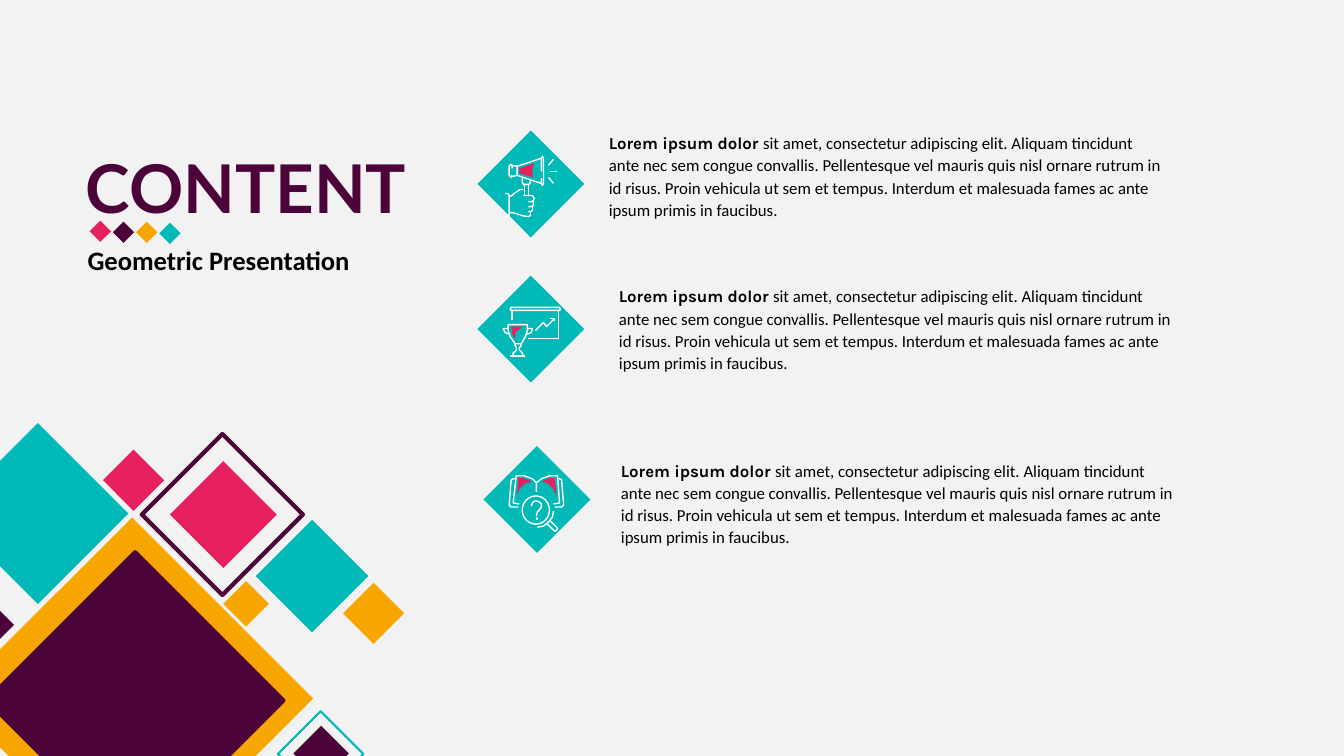
from pptx import Presentation
from pptx.dml.color import RGBColor
from pptx.enum.shapes import MSO_CONNECTOR, MSO_SHAPE
from pptx.enum.text import MSO_ANCHOR, MSO_AUTO_SIZE, PP_ALIGN
from pptx.oxml.ns import qn
from pptx.util import Pt
from lxml import etree

PX = 9144  # EMU per px, 100 px to the inch
RECT, OVAL = MSO_SHAPE.RECTANGLE, MSO_SHAPE.OVAL
STRAIGHT = MSO_CONNECTOR.STRAIGHT
GROW, TOP, LEFT = MSO_AUTO_SIZE.SHAPE_TO_FIT_TEXT, MSO_ANCHOR.TOP, PP_ALIGN.LEFT

PAPER = RGBColor(0xF2, 0xF2, 0xF2)
BLACK = RGBColor(0x00, 0x00, 0x00)
WHITE = RGBColor(0xFF, 0xFF, 0xFF)
PLUM = RGBColor(0x4C, 0x03, 0x39)
TEAL = RGBColor(0x01, 0xB9, 0xB7)
AMBER = RGBColor(0xF7, 0xA6, 0x00)
PINK = RGBColor(0xE7, 0x20, 0x5F)

LEAD = "Lorem ipsum dolor "
BODY = ("sit amet, consectetur adipiscing elit. Aliquam tincidunt ante nec sem congue "
        "convallis. Pellentesque vel mauris quis nisl ornare rutrum in id risus. Proin "
        "vehicula ut sem et tempus. Interdum et malesuada fames ac ante ipsum primis in "
        "faucibus.")

# Corner tiles: left, top, size, fill, line colour, line width
CORNER_TILES = [
    (4, 566, 254, AMBER, None, 0),
    (-102, 572, 96, PLUM, None, 0),
    (-26, 446, 127, TEAL, None, 0),
    (164, 454, 113, None, PLUM, 3),
    (228, 583, 32, AMBER, None, 0),
    (349, 587, 43, AMBER, None, 0),
    (111, 455, 43, PINK, None, 0),
    (270, 532, 79, TEAL, None, 0),
    (288, 718, 60, None, TEAL, 1.5),
    (299, 728, 39, PLUM, None, 0),
    (30, 591, 208, PLUM, PLUM, 3),
    (184, 473, 75, PINK, None, 0),
]

# Icons: outlines as points, ovals as boxes, accents as filled outlines
MEGAPHONE = {
    "lines": [
        [(537, 157), (513, 165), (513, 174), (537, 182)],
        [(537, 170), (537, 157), (538, 155), (539, 157), (539, 182), (538, 184),
         (537, 182), (537, 177)],
        [(513, 165), (508, 164)], [(508, 175), (513, 174)],
        [(508, 174), (507, 176), (505, 174), (505, 165), (507, 163), (508, 165), (508, 167)],
        [(518, 176), (518, 181), (519, 183), (525, 183), (526, 181), (526, 179)],
        [(545, 170), (552, 170)], [(544, 164), (549, 158)], [(544, 176), (549, 182)],
        [(524, 200), (528, 200), (530, 197), (528, 194), (519, 194)],
        [(524, 205), (527, 205), (529, 204), (529, 202)],
        [(524, 210), (526, 210), (528, 209), (528, 208)],
        [(505, 211), (508, 211), (512, 212), (518, 214), (524, 215), (526, 214), (526, 212)],
        [(519, 188), (516, 188), (513, 190), (510, 192), (508, 194), (505, 195)],
        [(526, 212), (526, 210)], [(528, 208), (528, 205)],
        [(501, 192), (504, 192), (505, 194), (505, 213), (504, 215), (501, 215)],
        [(529, 202), (529, 199)], [(524, 194), (524, 183)], [(520, 183), (520, 194)],
    ],
    "ovals": [],
    "accents": [[(515, 172), (515, 167), (530, 162), (528, 168), (528, 173), (529, 176)]],
}
TROPHY = {
    "lines": [
        [(508, 318), (508, 308), (554, 308), (554, 336), (524, 336)],
        [(555, 308), (507, 308), (506, 307), (507, 305), (555, 305), (556, 307), (555, 308)],
        [(523, 322), (504, 322), (504, 328), (506, 334), (511, 341), (517, 341),
         (521, 334), (523, 328), (523, 322)],
        [(523, 326), (528, 326), (527, 330), (522, 332)],
        [(504, 326), (499, 326), (501, 330), (506, 332)],
        [(509, 353), (509, 350), (511, 349), (512, 347), (512, 344), (511, 343), (511, 341)],
        [(516, 341), (517, 343), (515, 345), (515, 347), (517, 349), (518, 350), (519, 353)],
        [(506, 353), (521, 353)],
        [(531, 328), (539, 320), (542, 324), (550, 316)],
        [(546, 316), (550, 316), (550, 319)],
    ],
    "ovals": [],
    "accents": [[(512, 329), (515, 327), (518, 324), (507, 324), (508, 331), (511, 337),
                 (511, 332)]],
}
BOOK = {
    "lines": [
        [(549, 500), (555, 499), (553, 472), (545, 472), (537, 475), (532, 479)],
        [(515, 500), (509, 499), (512, 472), (520, 472), (528, 475), (532, 479), (532, 488)],
        [(514, 503), (507, 503), (505, 501), (507, 476), (509, 475), (511, 475)],
        [(553, 475), (555, 475), (557, 476), (559, 501), (557, 503), (550, 503)],
        [(533, 523), (539, 522), (544, 518), (548, 513), (549, 507)],
        [(546, 517), (552, 523), (553, 525), (551, 527), (549, 526), (543, 520)],
        [(527, 502), (528, 499), (530, 497), (532, 497), (535, 498), (537, 500),
         (537, 503), (535, 506), (533, 508), (532, 512)],
    ],
    "ovals": [(518, 492, 27, 28), (532, 514, 1, 1)],
    "accents": [
        [(513, 491), (515, 486), (518, 482), (522, 479), (528, 478), (522, 475), (514, 474)],
        [(552, 491), (549, 486), (546, 482), (542, 479), (537, 478), (542, 475), (550, 474)],
    ],
}

# Rows: text left and top, tile left and top, icon
ROWS = [
    (594, 125, 489, 145, MEGAPHONE),
    (604, 277, 489, 289, TROPHY),
    (606, 450, 495, 458, BOOK),
]


def paint(sp, fill=None, line=None, width=1):
    sp.shadow.inherit = False
    if fill is None:
        sp.fill.background()
    else:
        sp.fill.solid()
        sp.fill.fore_color.rgb = fill
    if line is None:
        sp.line.fill.background()
    else:
        sp.line.color.rgb = line
        sp.line.width = Pt(width)


def add_tile(shapes, x, y, size, fill, line=None, width=1):
    sp = shapes.add_shape(RECT, x * PX, y * PX, size * PX, size * PX)
    sp.rotation = 45
    paint(sp, fill, line, width)


def add_outline(shapes, points, fill=None, line=None):
    builder = shapes.build_freeform(*points[0], scale=PX)
    closed = fill is not None or points[0] == points[-1]
    builder.add_line_segments(points[1:], close=closed)
    paint(builder.convert_to_shape(), fill, line)


def add_stroke(shapes, start, end):
    cx = shapes.add_connector(STRAIGHT, *(v * PX for v in start + end))
    cx.line.color.rgb = WHITE
    cx.line.width = Pt(1)
    etree.SubElement(cx._element.spPr, qn("a:effectLst"))


def add_icon(s, icon):
    shapes = s.shapes.add_group_shape().shapes
    for points in icon["lines"]:
        if len(points) == 2:
            add_stroke(shapes, *points)
        else:
            add_outline(shapes, points, line=WHITE)
    for box in icon["ovals"]:
        paint(shapes.add_shape(OVAL, *(v * PX for v in box)), line=WHITE)
    for points in icon["accents"]:
        add_outline(shapes, points, fill=PINK)


def place(sp, x, y, w, h):
    sp.left, sp.top, sp.width, sp.height = (v * PX for v in (x, y, w, h))


def style(r, font, size, color, bold):
    r.font.name, r.font.size, r.font.bold = font, Pt(size), bold
    r.font.color.rgb = color


def set_heading(sp, text, font, size, color):
    tf = sp.text_frame
    tf.text = text
    tf.word_wrap, tf.auto_size, tf.vertical_anchor = False, GROW, TOP
    tf.paragraphs[0].alignment = LEFT
    style(tf.paragraphs[0].runs[0], font, size, color, True)


def add_body(s, x, y):
    tf = s.shapes.add_textbox(x * PX, y * PX, 568 * PX, 98 * PX).text_frame
    tf.word_wrap, tf.auto_size = True, GROW
    p = tf.paragraphs[0]
    p.line_spacing = 1.1
    for text, font, bold in ((LEAD, "Karla", True), (BODY, "Calibri", False)):
        r = p.add_run()
        r.text = text
        style(r, font, 12, BLACK, bold)


def main():
    prs = Presentation()
    prs.slide_width, prs.slide_height = 1333 * PX, 750 * PX
    s = prs.slides.add_slide(prs.slide_layouts[5])
    s.background.fill.solid()
    s.background.fill.fore_color.rgb = PAPER

    # Corner pattern
    corner = s.shapes.add_group_shape().shapes
    for tile in CORNER_TILES:
        add_tile(corner, *tile)

    # Title and subtitle
    place(s.shapes.title, 75, 140, 352, 91)
    set_heading(s.shapes.title, "CONTENT", "Lato", 48, PLUM)
    subtitle = s.shapes.add_textbox(77 * PX, 237 * PX, 284 * PX, 42 * PX)
    set_heading(subtitle, "Geometric Presentation", "Calibri", 19, BLACK)

    # Small tiles between them
    dots = s.shapes.add_group_shape().shapes
    for i, color in enumerate((PINK, PLUM, AMBER, TEAL)):
        add_tile(dots, 92 + 23 * i, 222 + (i + 1) // 2, 15, color)

    # Content rows
    for text_x, text_y, tile_x, tile_y, icon in ROWS:
        add_body(s, text_x, text_y)
        add_tile(s.shapes, tile_x, tile_y, 75, TEAL)
        add_icon(s, icon)

    prs.save("out.pptx")


if __name__ == "__main__":
    main()
